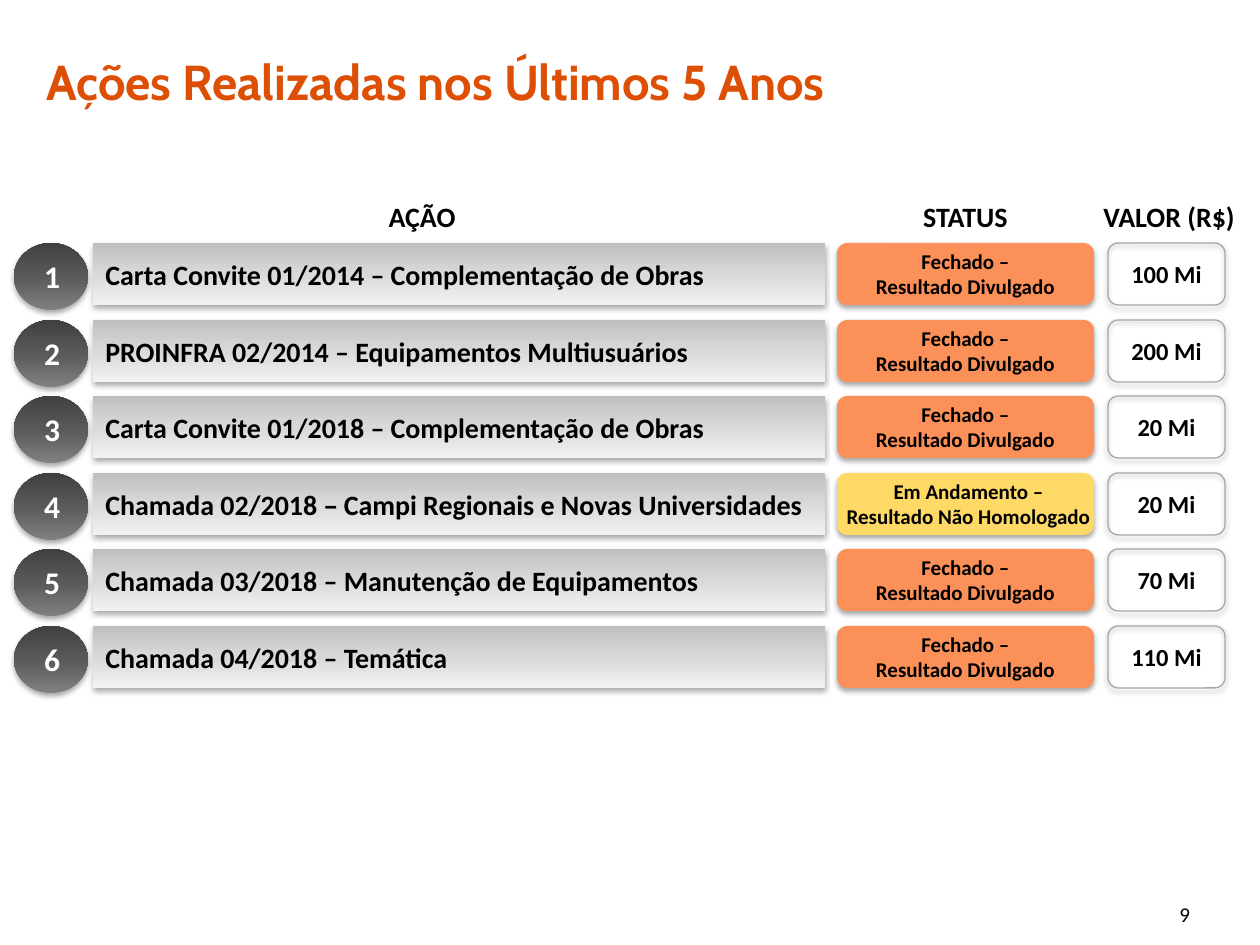
from copy import deepcopy

from lxml import etree
from pptx import Presentation
from pptx.dml.color import RGBColor
from pptx.enum.shapes import MSO_SHAPE
from pptx.enum.text import MSO_ANCHOR, MSO_AUTO_SIZE, PP_ALIGN
from pptx.oxml.ns import qn
from pptx.util import Emu, Pt

RECT, OVAL, ROUND = MSO_SHAPE.RECTANGLE, MSO_SHAPE.OVAL, MSO_SHAPE.ROUNDED_RECTANGLE
LEFT, CENTER = PP_ALIGN.LEFT, PP_ALIGN.CENTER
TOP, MIDDLE = MSO_ANCHOR.TOP, MSO_ANCHOR.MIDDLE
GROW, FIXED = MSO_AUTO_SIZE.SHAPE_TO_FIT_TEXT, MSO_AUTO_SIZE.NONE

PX_PER_INCH = 126
BODY, DISPLAY = "Calibri", "Cabin"

BLACK = RGBColor(0x00, 0x00, 0x00)
WHITE = RGBColor(0xFF, 0xFF, 0xFF)
TITLE = RGBColor(0xDD, 0x4F, 0x05)
ORANGE = RGBColor(0xFB, 0x90, 0x58)
YELLOW = RGBColor(0xFF, 0xD9, 0x66)
OUTLINE = RGBColor(0xA6, 0xA6, 0xA6)
BAR_STOPS = (
    (0, RGBColor(0xF2, 0xF2, 0xF2)),
    (0.5, RGBColor(0xD9, 0xD9, 0xD9)),
    (1, RGBColor(0xBF, 0xBF, 0xBF)),
)
BADGE_STOPS = (
    (0, RGBColor(0x80, 0x80, 0x80)),
    (0.51, RGBColor(0x59, 0x59, 0x59)),
    (1, RGBColor(0x40, 0x40, 0x40)),
)

ROW_TOP, ROW_PITCH, ROW_HEIGHT = 243, 76.6, 62

CLOSED = (ORANGE, 832, 267, ("Fechado –", "Resultado Divulgado"))
ONGOING = (YELLOW, 820, 297, ("Em Andamento –", "Resultado Não Homologado"))
CAMPI = (
    ("Chamada 02/2018 ", BODY),
    ("– ", DISPLAY),
    ("Campi Regionais e Novas Universidades", BODY),
)
ACTIONS = (
    ("Carta Convite 01/2014 – Complementação de Obras", CLOSED, "100 Mi"),
    ("PROINFRA 02/2014 – Equipamentos Multiusuários", CLOSED, "200 Mi"),
    ("Carta Convite 01/2018 – Complementação de Obras", CLOSED, "20 Mi"),
    (CAMPI, ONGOING, "20 Mi"),
    ("Chamada 03/2018 – Manutenção de Equipamentos", CLOSED, "70 Mi"),
    ("Chamada 04/2018 – Temática", CLOSED, "110 Mi"),
)
HEADINGS = (("AÇÃO", 375, 94), ("STATUS", 910, 111), ("VALOR (R$)", 1090, 158))


def px(n):
    return Emu(round(n * 914400 / PX_PER_INCH))


def add_shadow(sp):
    sp.shadow.inherit = False
    effects = sp._element.spPr.find(qn("a:effectLst"))
    shadow = etree.SubElement(effects, qn("a:outerShdw"), blurRad="40000",
                              dist="23000", dir="5400000", rotWithShape="0")
    color = etree.SubElement(shadow, qn("a:srgbClr"), val=str(BLACK))
    etree.SubElement(color, qn("a:alpha"), val="35000")


def fill_gradient(sp, stops):
    sp.fill.gradient()
    sp.fill.gradient_angle = 90
    first = sp._element.spPr.find(".//" + qn("a:gs"))
    first.addnext(deepcopy(first))
    for stop, (position, color) in zip(sp.fill.gradient_stops, stops):
        stop.position = position
        stop.color.rgb = color


def add_shape(s, kind, box, fill=None, stops=None, line=None):
    sp = s.shapes.add_shape(kind, *map(px, box))
    add_shadow(sp)
    if stops:
        fill_gradient(sp, stops)
    elif fill:
        sp.fill.solid()
        sp.fill.fore_color.rgb = fill
    else:
        sp.fill.background()
    if line:
        sp.line.color.rgb = line
        sp.line.width = Pt(0.75)
    else:
        sp.line.fill.background()


def add_text(s, box, lines, size, color=BLACK, font=BODY, bold=True,
             align=CENTER, wrap=True, anchor=TOP, auto_size=GROW):
    tf = s.shapes.add_textbox(*map(px, box)).text_frame
    frame_format = {"word_wrap": wrap, "vertical_anchor": anchor, "auto_size": auto_size}
    for name, value in frame_format.items():
        setattr(tf, name, value)
    for i, line in enumerate(lines):
        p = tf.paragraphs[0] if i == 0 else tf.add_paragraph()
        p.alignment = align
        runs = ((line, font),) if isinstance(line, str) else line
        for text, run_font in runs:
            r = p.add_run()
            r.text = text
            for name, value in {"name": run_font, "size": Pt(size), "bold": bold}.items():
                setattr(r.font, name, value)
            r.font.color.rgb = color


def add_action(s, number, top, label, status, value):
    status_color, status_left, status_width, status_lines = status
    add_shape(s, RECT, (93, top, 732, ROW_HEIGHT), stops=BAR_STOPS)
    add_shape(s, OVAL, (14, top, 74, 67), stops=BADGE_STOPS)
    add_shape(s, ROUND, (837, top, 257, ROW_HEIGHT), fill=status_color)
    add_shape(s, ROUND, (1108, top, 117, ROW_HEIGHT), line=OUTLINE)
    add_text(s, (31, top + 8, 42, 50), (str(number),), 18, color=WHITE, wrap=False)
    add_text(s, (93, top + 8, 733, 47), (label,), 16, align=LEFT)
    add_text(s, (status_left, top - 1, status_width, 64), status_lines, 12)
    add_text(s, (1108, top + 10, 117, 43), (value,), 14)


def main():
    prs = Presentation()
    prs.slide_width, prs.slide_height = px(1260), px(945)
    s = prs.slides.add_slide(prs.slide_layouts[6])
    add_text(s, (34, 1, 1226, 159), ("Ações Realizadas nos Últimos 5 Anos",), 28,
             color=TITLE, font=DISPLAY, align=LEFT, anchor=MIDDLE, auto_size=FIXED)
    for text, left, width in HEADINGS:
        add_text(s, (left, 193, width, 47), (text,), 16, wrap=False)
    for i, action in enumerate(ACTIONS):
        add_action(s, i + 1, ROW_TOP + round(i * ROW_PITCH), *action)
    add_text(s, (1167, 895, 60, 38), ("9",), 12, bold=False, align=LEFT)
    prs.save("out.pptx")


if __name__ == "__main__":
    main()
